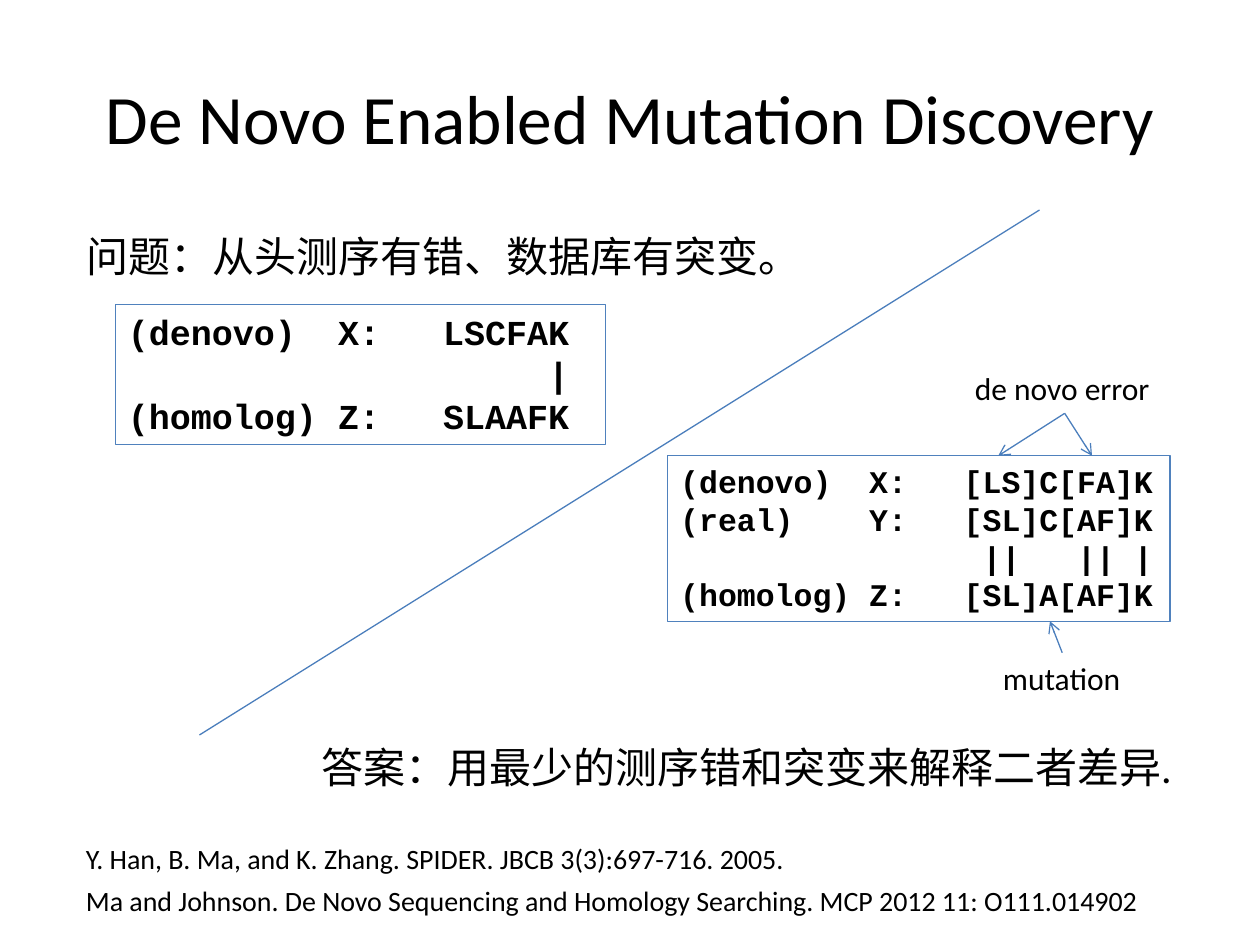
from typing import NamedTuple

from lxml import etree
from pptx import Presentation
from pptx.dml.color import RGBColor
from pptx.enum import shapes, text
from pptx.oxml import ns
from pptx.util import Pt

BLACK = RGBColor(0x00, 0x00, 0x00)
BOX_BLUE = RGBColor(0x4F, 0x81, 0xBD)
LINE_BLUE = RGBColor(0x4B, 0x7E, 0xBC)
LINE_WIDTH = Pt(0.75)


class Area(NamedTuple):
    left: float
    top: float
    width: float
    height: float


class Label(NamedTuple):
    wording: str
    area: Area
    size: float
    wrap: bool = True
    space_before: float = 0
    align: text.PP_ALIGN = text.PP_ALIGN.LEFT
    anchor: text.MSO_ANCHOR = text.MSO_ANCHOR.TOP


class Row(NamedTuple):
    source: str
    symbol: str
    sequence: str


class Alignment(NamedTuple):
    area: Area
    size: float
    wrap: bool
    rows: list[Row]


class Stroke(NamedTuple):
    start: tuple[float, float]
    end: tuple[float, float]
    arrow: bool = True


LABELS = [
    Label("De Novo Enabled Mutation Discovery", Area(36, 21.6, 648, 90), 39.6,
          align=text.PP_ALIGN.CENTER, anchor=text.MSO_ANCHOR.MIDDLE),
    Label("问题：从头测序有错、数据库有突变。", Area(42.5, 128, 438, 70), 24, space_before=4.8),
    Label("答案：用最少的测序错和突变来解释二者差异.", Area(176.4, 420, 514, 36), 24),
    Label("Y. Han, B. Ma, and K. Zhang. SPIDER. JBCB 3(3):697-716. 2005.",
          Area(42, 477.5, 552, 26.6), 16),
    Label("Ma and Johnson. De Novo Sequencing and Homology Searching. MCP 2012 11: O111.014902",
          Area(42, 501.5, 636, 26.6), 16),
    Label("de novo error", Area(550, 207.4, 116, 29), 18, wrap=False),
    Label("mutation", Area(566, 373, 82, 29), 18, wrap=False),
]

ALIGNMENTS = [
    Alignment(Area(66, 174, 280, 80), 20, True, [
        Row("(denovo)", "X:", "LSCFAK"),
        Row("", "", "     |"),
        Row("(homolog)", "Z:", "SLAAFK"),
    ]),
    Alignment(Area(381.6, 260.5, 287, 94.5), 18, False, [
        Row("(denovo)", "X:", "[LS]C[FA]K"),
        Row("(real)", "Y:", "[SL]C[AF]K"),
        Row("", "", " ||   || |"),
        Row("(homolog)", "Z:", "[SL]A[AF]K"),
    ]),
]

ERROR_ORIGIN = (608.4, 236.2)
STROKES = [
    Stroke((594, 120), (114, 420), arrow=False),
    Stroke(ERROR_ORIGIN, (570.4, 260.5)),
    Stroke(ERROR_ORIGIN, (624, 260.5)),
    Stroke((607, 373), (600, 355)),
]


def write(frame, lines: list[str], *, size: float, font: str = "Calibri",
          bold: bool = False, wrap: bool = True, space_before: float = 0,
          align=text.PP_ALIGN.LEFT, anchor=text.MSO_ANCHOR.TOP) -> None:
    frame.word_wrap = wrap
    frame.vertical_anchor = anchor
    for index, line in enumerate(lines):
        paragraph = frame.add_paragraph() if index else frame.paragraphs[0]
        paragraph.alignment = align
        paragraph.space_before = Pt(space_before)
        run = paragraph.add_run()
        run.text = line
        run.font.name = font
        run.font.size = Pt(size)
        run.font.bold = bold
        run.font.color.rgb = BLACK


def draw_label(slide, label: Label) -> None:
    box = slide.shapes.add_textbox(*map(Pt, label.area))
    write(box.text_frame, [label.wording], size=label.size, wrap=label.wrap,
          space_before=label.space_before, align=label.align, anchor=label.anchor)


def draw_alignment(slide, alignment: Alignment) -> None:
    """Draw an outlined box whose rows line up in fixed-width columns."""
    box = slide.shapes.add_shape(shapes.MSO_SHAPE.RECTANGLE, *map(Pt, alignment.area))
    box.shadow.inherit = False
    box.fill.background()
    box.line.color.rgb = BOX_BLUE
    box.line.width = LINE_WIDTH
    rows = [f"{row.source:<10}{row.symbol:<5}{row.sequence}" for row in alignment.rows]
    write(box.text_frame, rows, size=alignment.size, font="Courier New",
          bold=True, wrap=alignment.wrap)


def draw_stroke(slide, stroke: Stroke) -> None:
    connector = slide.shapes.add_connector(
        shapes.MSO_CONNECTOR.STRAIGHT, *map(Pt, stroke.start + stroke.end))
    connector.line.color.rgb = LINE_BLUE
    connector.line.width = LINE_WIDTH
    properties = connector._element.spPr
    if stroke.arrow:
        outline = properties.find(ns.qn("a:ln"))
        etree.SubElement(outline, ns.qn("a:tailEnd"), type="arrow")
    etree.SubElement(properties, ns.qn("a:effectLst"))


def main() -> None:
    deck = Presentation()
    deck.slide_width, deck.slide_height = Pt(720), Pt(540)
    slide = deck.slides.add_slide(deck.slide_layouts[6])
    for label in LABELS:
        draw_label(slide, label)
    for alignment in ALIGNMENTS:
        draw_alignment(slide, alignment)
    for stroke in STROKES:
        draw_stroke(slide, stroke)
    deck.save("out.pptx")


if __name__ == "__main__":
    main()
